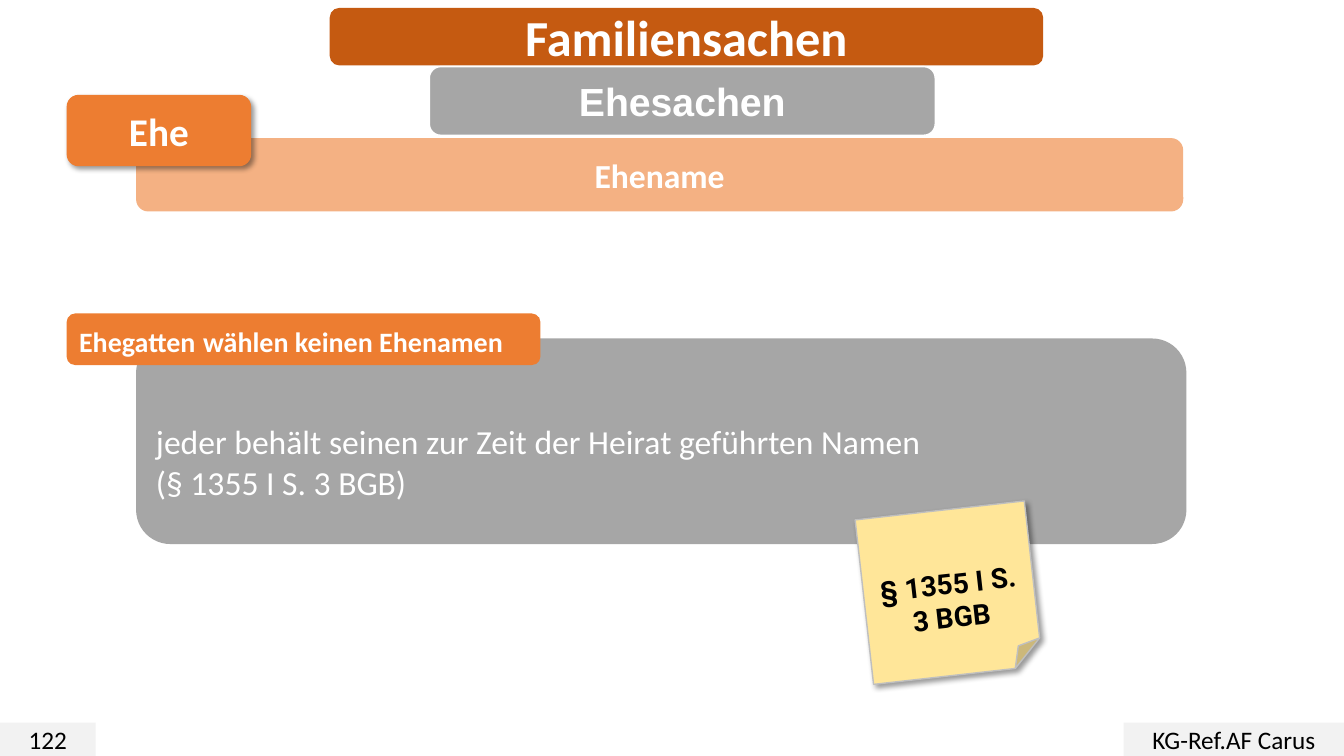
from lxml import etree
from pptx import Presentation
from pptx import util as u
from pptx.dml.color import RGBColor
from pptx.enum import shapes, text
from pptx.oxml.ns import qn

HUES = {
    "rust": "C55A11", "orange": "ED7D31", "peach": "F4B183",
    "grey": "A6A6A6", "pale": "F2F2F2", "note": "FFE699",
    "edge": "BFBFBF", "white": "FFFFFF", "black": "000000",
}
KIND = shapes.MSO_SHAPE
MID, LEFT = text.PP_ALIGN.CENTER, text.PP_ALIGN.LEFT
HEAD = {"name": "Calibri", "bold": True}
PLAIN = {"name": "Calibri", "bold": False}


def hue(name):
    return RGBColor.from_string(HUES[name])


def style(item, form):
    for key, value in form.items():
        setattr(item, key, value)


def box(slide, place, fill, kind=KIND.ROUNDED_RECTANGLE, edge=None):
    """Add a filled shape; place is left, top, width, height in cm."""
    shape = slide.shapes.add_shape(kind, *map(u.Cm, place))
    shape.shadow.inherit = False
    shape.fill.solid()
    shape.fill.fore_color.rgb = hue(fill)
    if edge:
        shape.line.color.rgb = hue(edge)
        shape.line.width = u.Pt(1)
    else:
        shape.line.fill.background()
    return shape


def write(shape, lines, size, font, ink="white", align=MID, drop=0.13):
    """Fill in lines, each a list of (text, changed font values)."""
    frame = shape.text_frame
    style(frame, {"word_wrap": True, "margin_top": u.Cm(drop),
                  "vertical_anchor": text.MSO_ANCHOR.MIDDLE})
    for i, line in enumerate(lines):
        para = frame.add_paragraph() if i else frame.paragraphs[0]
        para.alignment = align
        for words, change in line:
            run = para.add_run()
            run.text = words
            style(run.font, {"size": u.Pt(size), **font, **change})
            run.font.color.rgb = hue(ink)


def shade(shape):
    """Cast a soft shadow to the lower right."""
    effect = shape._element.spPr.find(qn("a:effectLst"))
    outer = etree.SubElement(effect, qn("a:outerShdw"), {
        "blurRad": str(u.Pt(4)), "dist": str(u.Pt(3)), "dir": "2700000",
        "algn": "tl", "rotWithShape": "0"})
    tint = etree.SubElement(outer, qn("a:srgbClr"), val=HUES["black"])
    etree.SubElement(tint, qn("a:alpha"), val="40000")


def label(slide, place, fill, words, size, font=HEAD, edge=None):
    shape = box(slide, place, fill, edge=edge)
    write(shape, [[(words, {})]], size, font)
    return shape


def foot(slide, left, width, words):
    shape = box(slide, (left, 18.21, width, 0.84), "pale", KIND.RECTANGLE)
    write(shape, [[(words, {})]], 18, PLAIN, "black")


def sticky(slide, place, words):
    shape = box(slide, place, "note", KIND.FOLDED_CORNER, "edge")
    shape.rotation = 353.6
    shade(shape)
    write(shape, [[(words, {})]], 20, {"name": "Roboto", "bold": True},
          "black", drop=1.2)


def main():
    deck = Presentation()
    style(deck, {"slide_width": u.Cm(33.87), "slide_height": u.Cm(19.05)})
    slide = deck.slides.add_slide(deck.slide_layouts[6])

    # Title and footer
    label(slide, (8.31, 0.2, 17.98, 1.45), "rust", "Familiensachen", 36)
    foot(slide, 0, 2.41, "122")
    foot(slide, 28.32, 5.55, "KG-Ref.AF Carus")

    # Topic
    label(slide, (10.82, 1.68, 12.75, 1.73), "grey", "Ehesachen", 28,
          {"name": "Arial", "bold": True}, "white")

    # Rule
    rule = box(slide, (3.43, 8.53, 26.47, 5.18), "grey")
    write(rule, [
        [("jeder behält seinen zur Zeit der Heirat geführten Namen", {})],
        [("(§ 1355 I S. 3 BGB)", {})],
    ], 24, PLAIN, align=LEFT, drop=1.15)

    # Section heading
    label(slide, (3.43, 3.48, 26.39, 1.85), "peach", "Ehename", 24)
    shade(label(slide, (1.68, 2.39, 4.65, 1.8), "orange", "Ehe", 28))

    # Statute note and case heading
    sticky(slide, (21.77, 12.85, 4.29, 4.17), "§ 1355 I S. 3 BGB")
    case = box(slide, (1.68, 7.9, 11.94, 1.3), "orange")
    write(case, [[("Ehegatten", {}),
                  (" ", {"size": u.Pt(24), "bold": False}),
                  ("wählen keinen Ehenamen", {})]], 20, HEAD, align=LEFT)

    deck.save("out.pptx")


if __name__ == "__main__":
    main()
